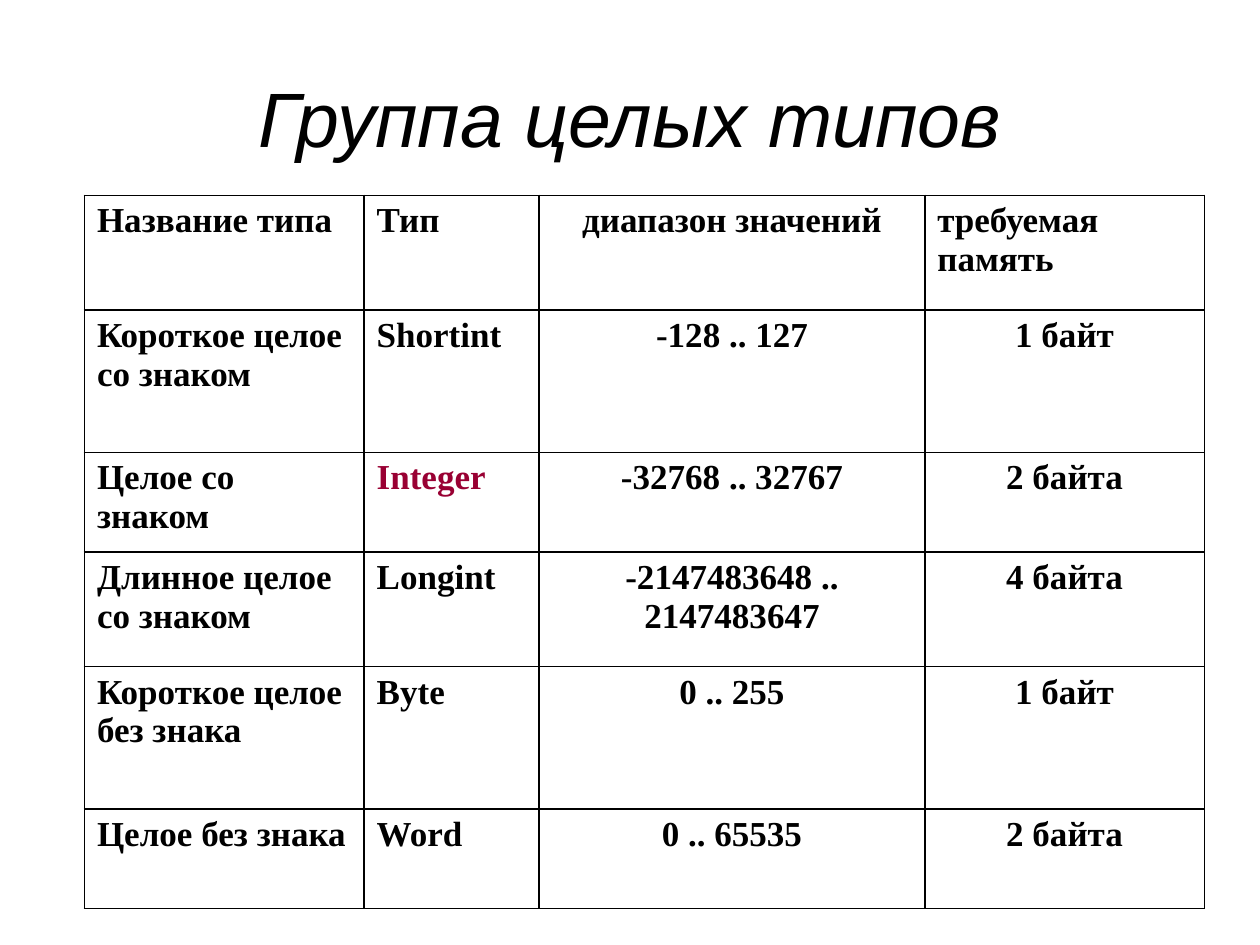
from dataclasses import dataclass

from lxml import etree
from pptx import Presentation
from pptx.dml.color import RGBColor
from pptx.enum import text
from pptx.oxml import ns
from pptx.util import Inches, Pt


@dataclass(frozen=True)
class Theme:
    ink: str = "000000"
    accent: str = "990033"
    paper: str = "FFFFFF"
    title_font: str = "Arial"
    table_font: str = "Times New Roman"
    title_size: int = 44
    table_size: int = 20
    border: int = 1


@dataclass(frozen=True)
class IntegerType:
    title: str
    name: str
    values: str
    memory: str
    height: float
    highlight: bool = False


THEME = Theme()
COLUMN_WIDTHS = (2.22, 1.39, 3.06, 2.22)
HEADER = IntegerType("Название типа", "Тип", "диапазон значений",
                     "требуемая память", 0.91)
TYPES = (
    IntegerType("Короткое целое со знаком", "Shortint", "-128 .. 127", "1 байт", 1.13),
    IntegerType("Целое со знаком", "Integer", "-32768 .. 32767", "2 байта", 0.79, True),
    IntegerType("Длинное целое со знаком", "Longint",
                "-2147483648 .. 2147483647", "4 байта", 0.91),
    IntegerType("Короткое целое без знака", "Byte", "0 .. 255", "1 байт", 1.13),
    IntegerType("Целое без знака", "Word", "0 .. 65535", "2 байта", 0.79),
)


def write(tf, content: str, *, font: str, size: int, color: str = THEME.ink,
          bold: bool = False, italic: bool = False, centered: bool = False) -> None:
    tf.word_wrap = True
    p = tf.paragraphs[0]
    p.alignment = text.PP_ALIGN.CENTER if centered else text.PP_ALIGN.LEFT
    r = p.add_run()
    r.text = content
    r.font.name, r.font.size = font, Pt(size)
    r.font.bold, r.font.italic = bold, italic
    r.font.color.rgb = RGBColor.from_string(color)


def add_borders(cell) -> None:
    props = cell._tc.get_or_add_tcPr()
    for i, side in enumerate(("lnL", "lnR", "lnT", "lnB")):
        line = etree.Element(ns.qn(f"a:{side}"), w=str(Pt(THEME.border)))
        fill = etree.SubElement(line, ns.qn("a:solidFill"))
        etree.SubElement(fill, ns.qn("a:srgbClr"), val=THEME.ink)
        props.insert(i, line)  # borders come before the cell fill


def add_title(slide, content: str) -> None:
    sp = slide.shapes.add_textbox(Inches(0.5), Inches(0.3), Inches(9), Inches(1.25))
    sp.text_frame.vertical_anchor = text.MSO_ANCHOR.MIDDLE
    write(sp.text_frame, content, font=THEME.title_font, size=THEME.title_size,
          italic=True, centered=True)


def add_type_table(slide, rows: tuple[IntegerType, ...]) -> None:
    table = slide.shapes.add_table(
        len(rows), len(COLUMN_WIDTHS), Inches(0.67), Inches(1.55),
        Inches(sum(COLUMN_WIDTHS)), Inches(sum(row.height for row in rows))).table
    table.first_row = table.horz_banding = False
    for column, width in zip(table.columns, COLUMN_WIDTHS):
        column.width = Inches(width)
    for i, row in enumerate(rows):
        table.rows[i].height = Inches(row.height)
        for j, content in enumerate((row.title, row.name, row.values, row.memory)):
            cell = table.cell(i, j)
            cell.fill.solid()
            cell.fill.fore_color.rgb = RGBColor.from_string(THEME.paper)
            add_borders(cell)
            # Ranges are always centred; memory sizes only below the header
            write(cell.text_frame, content, font=THEME.table_font,
                  size=THEME.table_size, bold=True,
                  color=THEME.accent if row.highlight and j == 1 else THEME.ink,
                  centered=j == 2 or (j == 3 and i > 0))


def main() -> None:
    prs = Presentation()
    prs.slide_width, prs.slide_height = Inches(10), Inches(7.5)
    slide = prs.slides.add_slide(prs.slide_layouts[6])
    add_title(slide, "Группа целых типов")
    add_type_table(slide, (HEADER, *TYPES))
    prs.save("out.pptx")


if __name__ == "__main__":
    main()
